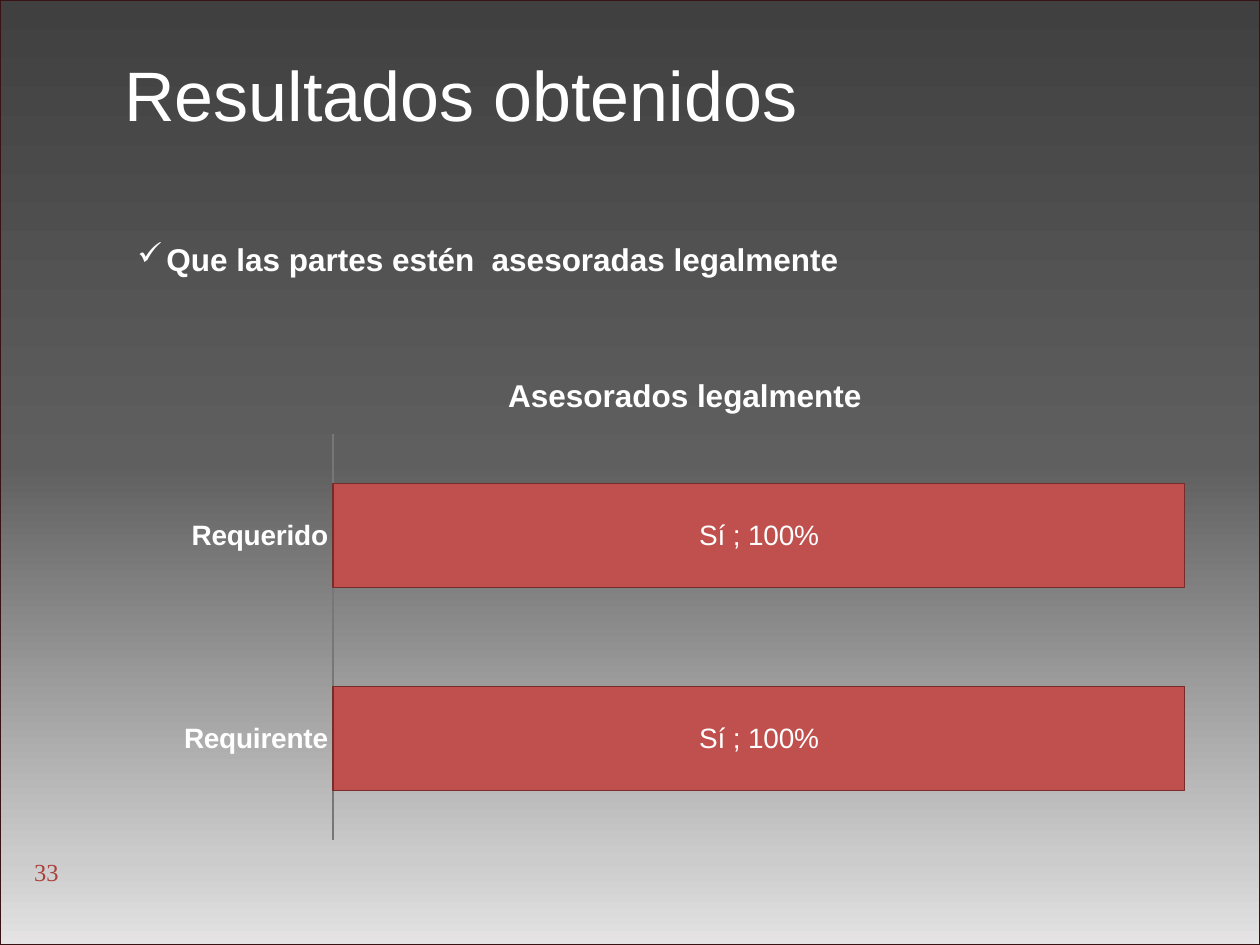
from lxml import etree
from pptx import Presentation
from pptx.chart.data import CategoryChartData
from pptx.dml.color import RGBColor
from pptx.enum.chart import XL_CHART_TYPE as ChartType
from pptx.enum.chart import XL_LABEL_POSITION as LabelPosition
from pptx.enum.chart import XL_TICK_MARK as TickMark
from pptx.enum.shapes import MSO_SHAPE as Shape
from pptx.enum.text import MSO_ANCHOR as Anchor
from pptx.enum.text import PP_ALIGN as Align
from pptx.oxml import parse_xml
from pptx.oxml.ns import nsdecls, qn
from pptx.util import Pt

PAGE_WIDTH, PAGE_HEIGHT = 1260, 945
WHITE = "FFFFFF"
BACKDROP_STOPS = [(0, "404040"), (49, "5F5F5F"), (91, "CCCCCC"), (100, "E5E3E3")]


def px(*lengths):
    """Turn pixels (126 to the inch) into EMU."""
    return [round(length * 914400 / 126) for length in lengths]


def color(value):
    return RGBColor.from_string(value)


class SlideBuilder:
    font_name = "Arial"

    def __init__(self, page):
        self.page = page

    def style(self, font, size, shade=WHITE, bold=False, name=None):
        font.name = name or self.font_name
        font.size = Pt(size)
        font.bold = bold
        font.color.rgb = color(shade)

    def backdrop(self, stops, border):
        panel = self.page.shapes.add_shape(
            Shape.RECTANGLE, *px(0, 0, PAGE_WIDTH, PAGE_HEIGHT))
        panel.shadow.inherit = False
        panel.line.color.rgb = color(border)
        panel.line.width = Pt(1)
        panel.fill.gradient()
        panel.fill.gradient_angle = 270
        stop_list = panel.fill._xPr.find(qn("a:gradFill")).find(qn("a:gsLst"))
        for stop in list(stop_list):
            stop_list.remove(stop)
        for position, shade in stops:
            stop_list.append(parse_xml(
                f'<a:gs {nsdecls("a")} pos="{position * 1000}">'
                f'<a:srgbClr val="{shade}"/></a:gs>'))

    def text(self, words, at, size, bold=False, bullet=None, wrap=True):
        box = self.page.shapes.add_textbox(*px(*at))
        box.text_frame.word_wrap = wrap
        box.text_frame.text = words
        para = box.text_frame.paragraphs[0]
        if bullet:
            self.bullet(para, bullet)
        self.style(para.runs[0].font, size, bold=bold)

    def bullet(self, para, mark):
        properties = para._p.get_or_add_pPr()
        indent = px(29)[0]
        properties.set("marL", str(indent))
        properties.set("indent", str(-indent))
        shade = etree.SubElement(properties, qn("a:buClr"))
        etree.SubElement(shade, qn("a:srgbClr"), val=WHITE)
        etree.SubElement(properties, qn("a:buChar"), char=mark)

    def page_number(self, number, at):
        badge = self.page.shapes.add_shape(Shape.OVAL, *px(*at))
        badge.shadow.inherit = False
        badge.fill.background()
        badge.line.fill.background()
        frame = badge.text_frame
        frame.margin_left = frame.margin_right = 0
        frame.margin_top = frame.margin_bottom = 0
        frame.vertical_anchor = Anchor.TOP
        frame.text = number
        para = frame.paragraphs[0]
        para.alignment = Align.LEFT
        self.style(para.runs[0].font, 14, "A9423D", name="Times New Roman")

    def bar_chart(self, title, categories, series_name, values, at, plot_at):
        data = CategoryChartData(number_format="0%")
        data.categories = categories
        data.add_series(series_name, values)
        chart = self.page.shapes.add_chart(
            ChartType.BAR_STACKED_100, *px(*at), data).chart
        self.style(chart.font, 10, "632423", name="Times New Roman")
        chart.has_legend = False
        chart.has_title = True
        chart.chart_title.text_frame.text = title
        heading = chart.chart_title.text_frame.paragraphs[0].runs[0]
        self.style(heading.font, 18, bold=True)
        self.axes(chart)
        self.bars(chart.plots[0])
        self.place_plot(chart, at, plot_at)

    def axes(self, chart):
        names, scale = chart.category_axis, chart.value_axis
        names.major_tick_mark = names.minor_tick_mark = TickMark.NONE
        names.has_major_gridlines = False
        names.format.line.color.rgb = color("777777")
        self.style(names.tick_labels.font, 16, bold=True)
        scale.has_major_gridlines = False
        scale.minimum_scale, scale.maximum_scale = 0, 1
        scale.tick_labels.number_format = "0%"
        scale.tick_labels.number_format_is_linked = False
        scale.visible = False

    def bars(self, plot):
        plot.vary_by_categories = False
        plot.gap_width = 95
        plot.overlap = 100
        series = plot.series[0]
        series.format.fill.solid()
        series.format.fill.fore_color.rgb = color("C0504D")
        series.format.line.color.rgb = color("772C2A")
        series.format.line.width = Pt(0.75)
        labels = series.data_labels
        labels.show_value = labels.show_series_name = True
        labels.number_format = "0%"
        labels.number_format_is_linked = False
        labels.position = LabelPosition.CENTER
        self.style(labels.font, 16)
        separator = parse_xml(f'<c:separator {nsdecls("c")}>; </c:separator>')
        labels._element.find(qn("c:showBubbleSize")).addnext(separator)

    def place_plot(self, chart, at, plot_at):
        """Fix the inner plot area, given in slide pixels."""
        left, top, width, height = at
        x, y, w, h = plot_at
        area = chart._chartSpace.chart.plotArea
        for old in area.findall(qn("c:layout")):
            area.remove(old)
        layout = etree.Element(qn("c:layout"))
        manual = etree.SubElement(layout, qn("c:manualLayout"))
        settings = [("layoutTarget", "inner"), ("xMode", "edge"), ("yMode", "edge"),
                    ("x", (x - left) / width), ("y", (y - top) / height),
                    ("w", w / width), ("h", h / height)]
        for tag, value in settings:
            etree.SubElement(manual, qn(f"c:{tag}"), val=str(value))
        area.insert(0, layout)


def main():
    deck = Presentation()
    deck.slide_width, deck.slide_height = px(PAGE_WIDTH, PAGE_HEIGHT)
    builder = SlideBuilder(deck.slides.add_slide(deck.slide_layouts[6]))
    builder.backdrop(BACKDROP_STOPS, "371413")
    builder.page_number("33", (25, 848, 63, 63))
    builder.text("Que las partes estén  asesoradas legalmente",
                 (125, 234, 833, 50), 18, bold=True, bullet="✓")
    builder.bar_chart("Asesorados legalmente", ["Requirente", "Requerido"],
                      "Sí ", [1, 1], (164, 353, 1042, 496), (333, 434, 852, 406))
    builder.text("Resultados obtenidos", (112, 45, 706, 97), 40, wrap=False)
    deck.save("out.pptx")


if __name__ == "__main__":
    main()
